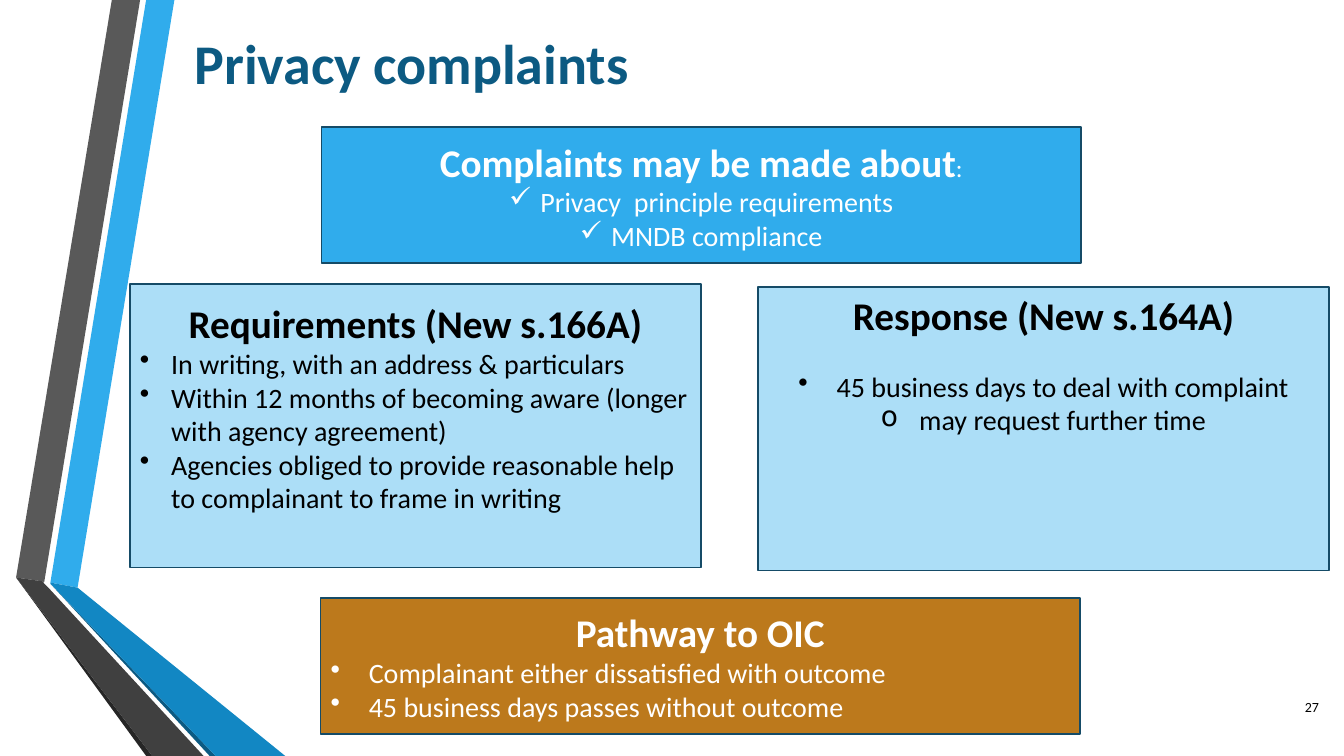
from lxml import etree
from pptx import Presentation
from pptx.dml.color import RGBColor
from pptx.enum.shapes import MSO_SHAPE
from pptx.enum.text import MSO_ANCHOR, PP_ALIGN
from pptx.oxml.ns import qn
from pptx.util import Inches, Pt

LEFT, CENTER, RIGHT = PP_ALIGN.LEFT, PP_ALIGN.CENTER, PP_ALIGN.RIGHT
TOP, MIDDLE = MSO_ANCHOR.TOP, MSO_ANCHOR.MIDDLE
RECTANGLE = MSO_SHAPE.RECTANGLE
FONT = "Calibri"

COLORS = {
    "sky": "30ACEC", "blue": "1287C3", "navy": "0C5A82", "pale": "ACDEF7",
    "grey": "595959", "charcoal": "404040", "coal": "262626",
    "ochre": "BC791C", "border": "154B67", "white": "FFFFFF", "black": "000000",
}

# Folded ribbons on the left edge: colour, outline points
RIBBONS = [
    ("sky", [(0.5, 5.78), (0.77, 5.83), (1.73, 0), (1.45, 0)]),
    ("grey", [(1.39, 0), (1.11, 0), (0.16, 5.73), (0.44, 5.77)]),
    ("coal", [(0.16, 5.73), (1.45, 7.5), (1.51, 7.5)]),
    ("navy", [(0.5, 5.79), (2.08, 7.5), (2.14, 7.5)]),
    ("blue", [(0.5, 5.79), (2.14, 7.5), (2.83, 7.5), (0.77, 5.83), (0.5, 5.78)]),
    ("charcoal", [(2.02, 7.5), (0.48, 5.83), (0.43, 5.78), (0.44, 5.77),
                  (0.16, 5.73), (1.51, 7.5)]),
]

# Plain text: text, box, size, colour, bold, alignment
LABELS = [
    ("Privacy complaints", (1.83, 0.15, 11.4, 0.93), 40, "navy", True, LEFT),
    ("27", (12.58, 6.81, 0.6, 0.4), 10, "black", False, RIGHT),
]

WIDE, HALF = (7.53, 1.35), (5.66, 2.81)
PANELS = [
    {"at": (3.19, 1.26), "size": WIDE, "fill": "sky", "ink": "white",
     "anchor": MIDDLE, "inset": 0.05, "heading": "Complaints may be made about",
     "suffix": ":", "gap": 0, "align": CENTER, "indent": 0.31,
     "items": [("✓", "Privacy  principle requirements"),
               ("✓", "MNDB compliance")]},
    {"at": (1.29, 2.82), "size": HALF, "fill": "pale", "ink": "black",
     "anchor": TOP, "inset": 0.15, "heading": "Requirements (New s.166A)",
     "suffix": "", "gap": 0, "align": LEFT, "indent": 0.31,
     "items": [("•", "In writing, with an address & particulars"),
               ("•", "Within 12 months of becoming aware (longer with agency agreement)"),
               ("•", "Agencies obliged to provide reasonable help to complainant "
                     "to frame in writing")]},
    {"at": (7.52, 2.85), "size": HALF, "fill": "pale", "ink": "black",
     "anchor": TOP, "inset": 0.04, "heading": "Response (New s.164A)",
     "suffix": "", "gap": 22, "align": CENTER, "indent": 0.38,
     "items": [("•", "45 business days to deal with complaint"),
               ("o", "may request further time")]},
    {"at": (3.18, 5.93), "size": WIDE, "fill": "ochre", "ink": "white",
     "anchor": MIDDLE, "inset": 0.05, "heading": "Pathway to OIC",
     "suffix": "", "gap": 0, "align": LEFT, "indent": 0.38,
     "items": [("•", "Complainant either dissatisfied with outcome"),
               ("•", "45 business days passes without outcome")]},
]


def rgb(name):
    return RGBColor.from_string(COLORS[name])


def paint(shape, fill):
    shape.shadow.inherit = False
    shape.fill.solid()
    shape.fill.fore_color.rgb = rgb(fill)


def add_run(p, text, size, color, bold=False):
    r = p.add_run()
    r.text = text
    r.font.name = FONT
    r.font.size = Pt(size)
    r.font.bold = bold
    r.font.color.rgb = rgb(color)


def set_bullet(p, char, indent):
    """Give the paragraph a bullet character with a hanging indent in inches."""
    pPr = p._p.get_or_add_pPr()
    pPr.set("marL", str(Inches(indent)))
    pPr.set("indent", str(-Inches(indent)))
    etree.SubElement(pPr, qn("a:buChar")).set("char", char)


def add_ribbon(s, fill, points):
    start, *rest = [(Inches(x), Inches(y)) for x, y in points]
    builder = s.shapes.build_freeform(*start)
    builder.add_line_segments(rest, close=True)
    ribbon = builder.convert_to_shape()
    paint(ribbon, fill)
    ribbon.line.fill.background()


def add_label(s, text, box, size, color, bold, align):
    tf = s.shapes.add_textbox(*map(Inches, box)).text_frame
    tf.word_wrap = True
    tf.vertical_anchor = MIDDLE
    p = tf.paragraphs[0]
    p.alignment = align
    add_run(p, text, size, color, bold)


def add_panel(s, panel):
    box = panel["at"] + panel["size"]
    shape = s.shapes.add_shape(RECTANGLE, *map(Inches, box))
    paint(shape, panel["fill"])
    shape.line.color.rgb = rgb("border")
    shape.line.width = Pt(1.25)
    tf = shape.text_frame
    tf.word_wrap = True
    tf.vertical_anchor = panel["anchor"]
    tf.margin_top = Inches(panel["inset"])
    p = tf.paragraphs[0]
    p.alignment = CENTER
    p.space_after = Pt(panel["gap"])
    add_run(p, panel["heading"], 28, panel["ink"], True)
    if panel["suffix"]:
        add_run(p, panel["suffix"], 18, panel["ink"])
    for char, text in panel["items"]:
        p = tf.add_paragraph()
        p.alignment = panel["align"]
        set_bullet(p, char, panel["indent"])
        add_run(p, text, 20, panel["ink"])


def main():
    prs = Presentation()
    prs.slide_width, prs.slide_height = Inches(13.33), Inches(7.5)
    s = prs.slides.add_slide(prs.slide_layouts[6])
    for ribbon in RIBBONS:
        add_ribbon(s, *ribbon)
    for label in LABELS:
        add_label(s, *label)
    for panel in PANELS:
        add_panel(s, panel)
    prs.save("out.pptx")


if __name__ == "__main__":
    main()
